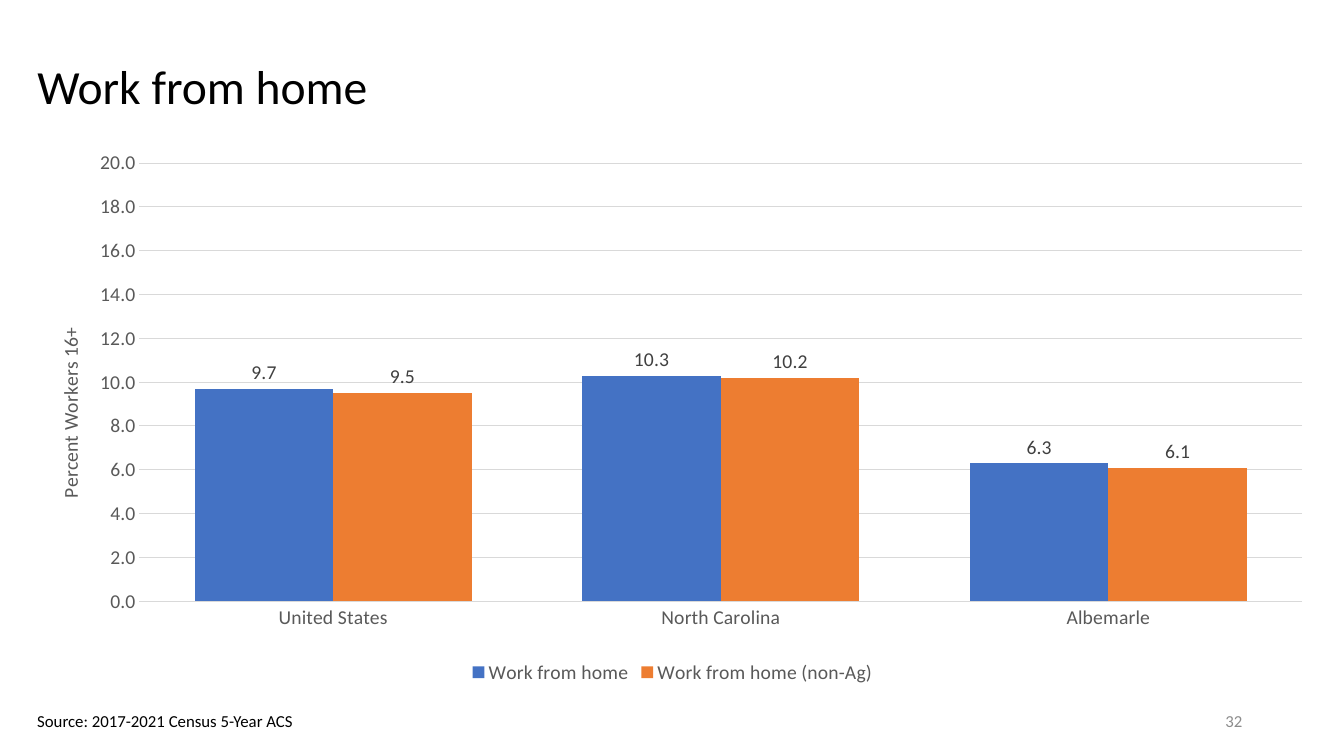
from lxml import etree
from pptx import Presentation
from pptx.chart.data import CategoryChartData
from pptx.dml.color import RGBColor
from pptx.enum.chart import XL_CHART_TYPE, XL_LABEL_POSITION, XL_LEGEND_POSITION, XL_TICK_MARK
from pptx.enum.text import MSO_ANCHOR, PP_ALIGN
from pptx.oxml.ns import qn
from pptx.util import Inches, Pt

# Content
TITLE = "Work from home"
SOURCE = "Source: 2017-2021 Census 5-Year ACS"
PAGE_NUMBER = "32"
AXIS_TITLE = "Percent Workers 16+"
REGIONS = ["United States", "North Carolina", "Albemarle"]
SERIES = [
    ("Work from home", [9.7, 10.3, 6.3], "blue"),
    ("Work from home (non-Ag)", [9.5, 10.2, 6.1], "orange"),
]

# Style
FONT = "Calibri"
COLORS = {
    "black": "000000",
    "page": "8C8C8C",
    "axis": "595959",
    "label": "404040",
    "grid": "D9D9D9",
    "blue": "4472C4",
    "orange": "ED7D31",
}
LEFT = 0.27


def color(name):
    return RGBColor.from_string(COLORS[name])


def format_font(font, size=14, color_name="axis"):
    font.name = FONT
    font.size = Pt(size)
    font.bold = False
    font.color.rgb = color(color_name)


def write_text(shape, text, size=12, color_name="black", align=PP_ALIGN.LEFT,
               anchor=MSO_ANCHOR.TOP, wrap=True, line_spacing=None):
    frame = shape.text_frame
    frame.word_wrap = wrap
    frame.vertical_anchor = anchor
    paragraph = frame.paragraphs[0]
    paragraph.text = text
    paragraph.alignment = align
    paragraph.line_spacing = line_spacing
    format_font(paragraph.runs[0].font, size, color_name)


def place_manually(layout, **settings):
    """Fill a chart layout element with a manual position."""
    for child in list(layout):
        layout.remove(child)
    manual = etree.SubElement(layout, qn("c:manualLayout"))
    for tag, value in settings.items():
        etree.SubElement(manual, qn(f"c:{tag}")).set("val", str(value))


def style_line(line):
    line.color.rgb = color("grid")
    line.width = Pt(0.75)


presentation = Presentation()
presentation.slide_width = Inches(13.33)
presentation.slide_height = Inches(7.5)
slide = presentation.slides.add_slide(presentation.slide_layouts[5])

# Title
title = slide.shapes.title
title.left, title.top = Inches(LEFT), Inches(0.34)
title.width, title.height = Inches(12.76), Inches(1.09)
write_text(title, TITLE, size=34, anchor=MSO_ANCHOR.MIDDLE, line_spacing=0.9)

# Page number and source
page_box = slide.shapes.add_textbox(Inches(9.42), Inches(6.95), Inches(3), Inches(0.4))
write_text(page_box, PAGE_NUMBER, color_name="page", align=PP_ALIGN.RIGHT,
           anchor=MSO_ANCHOR.MIDDLE)
source_box = slide.shapes.add_textbox(Inches(LEFT), Inches(7), Inches(2.78), Inches(0.3))
write_text(source_box, SOURCE, wrap=False)

# Chart
chart_data = CategoryChartData(number_format="0.0")
chart_data.categories = REGIONS
for name, values, _ in SERIES:
    chart_data.add_series(name, values)
chart = slide.shapes.add_chart(
    XL_CHART_TYPE.COLUMN_CLUSTERED, Inches(LEFT), Inches(1.43),
    Inches(12.8), Inches(5.4), chart_data).chart
chart.has_title = False
format_font(chart.font, color_name="black")

# Legend
chart.has_legend = True
chart.legend.position = XL_LEGEND_POSITION.BOTTOM
chart.legend.include_in_layout = False
format_font(chart.legend.font)

# Columns and value labels
plot = chart.plots[0]
plot.gap_width = 80
plot.overlap = 0
plot.vary_by_categories = False
for series, (_, _, fill_name) in zip(plot.series, SERIES):
    series.format.fill.solid()
    series.format.fill.fore_color.rgb = color(fill_name)
    labels = series.data_labels
    labels.show_value = True
    labels.number_format = "0.0"
    labels.number_format_is_linked = False
    labels.position = XL_LABEL_POSITION.OUTSIDE_END
    format_font(labels.font, color_name="label")

# Axes
category_axis, value_axis = chart.category_axis, chart.value_axis
for axis in (category_axis, value_axis):
    axis.major_tick_mark = XL_TICK_MARK.NONE
    axis.minor_tick_mark = XL_TICK_MARK.NONE
    format_font(axis.tick_labels.font)
style_line(category_axis.format.line)
value_axis.minimum_scale = 0
value_axis.maximum_scale = 20
value_axis.major_unit = 2
value_axis.has_major_gridlines = True
style_line(value_axis.major_gridlines.format.line)
value_axis.format.line.fill.background()
value_axis.tick_labels.number_format = "0.0"
value_axis.tick_labels.number_format_is_linked = False

axis_title = value_axis.axis_title
write_text(axis_title, AXIS_TITLE, size=14, color_name="axis", align=PP_ALIGN.CENTER) \
    if hasattr(axis_title.text_frame, "vertical_anchor") else None
body = axis_title.text_frame._txBody.find(qn("a:bodyPr"))
body.set("rot", "-5400000")
body.set("vert", "horz")

# Positions inside the chart
plot_area = chart._chartSpace.chart.plotArea
plot_layout = plot_area.find(qn("c:layout"))
if plot_layout is None:
    plot_layout = etree.Element(qn("c:layout"))
    plot_area.insert(0, plot_layout)
place_manually(plot_layout, layoutTarget="inner", xMode="edge", yMode="edge",
               x=0.087, y=0.035, w=0.901, h=0.805)
title_element = plot_area.find(".//" + qn("c:title"))
title_layout = title_element.find(qn("c:layout"))
if title_layout is None:
    title_layout = etree.Element(qn("c:layout"))
    title_element.find(qn("c:tx")).addnext(title_layout)
place_manually(title_layout, xMode="edge", yMode="edge", x=0.02, y=0.33)

presentation.save("out.pptx")
